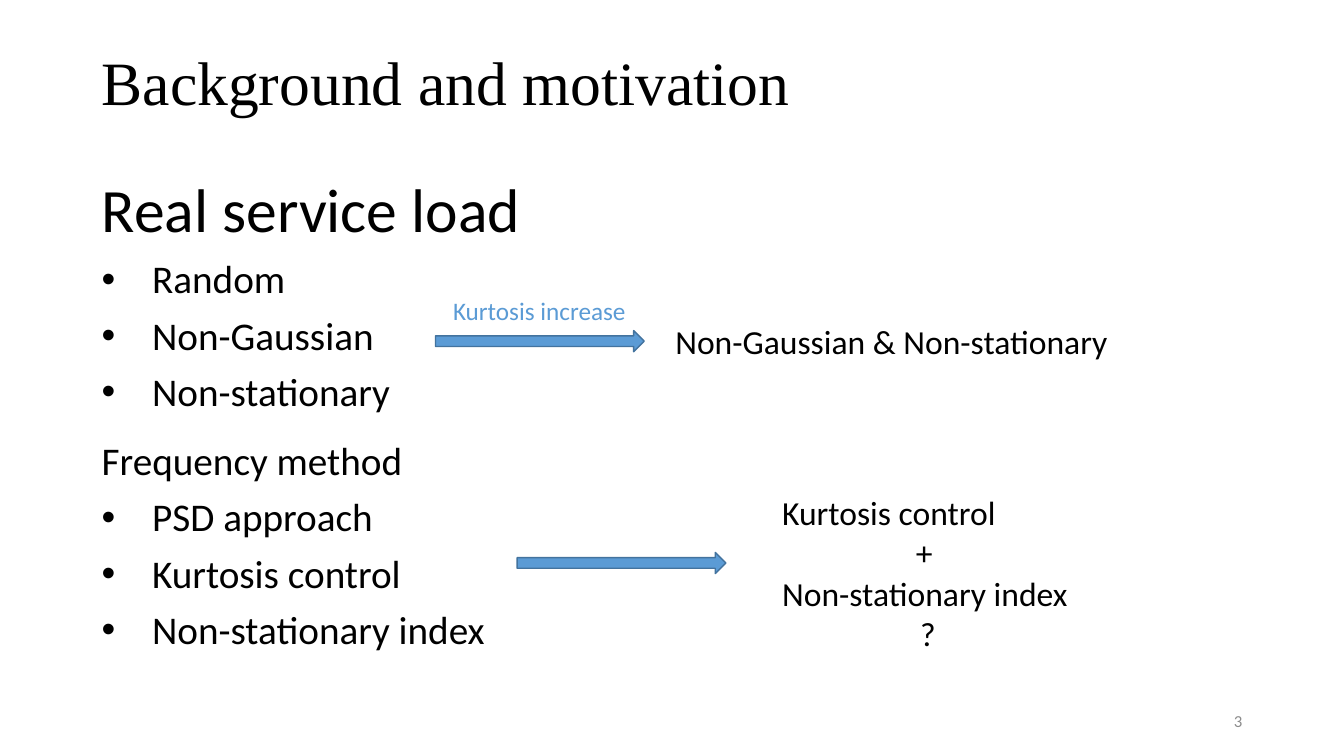
from lxml import etree
from pptx import Presentation
from pptx import util as u
from pptx.dml.color import RGBColor
from pptx.enum import shapes, text
from pptx.oxml import ns

WIDTH, HEIGHT = u.Inches(13.33), u.Inches(7.5)
LEFT, CENTER, RIGHT = text.PP_ALIGN.LEFT, text.PP_ALIGN.CENTER, text.PP_ALIGN.RIGHT
TOP, MIDDLE = text.MSO_ANCHOR.TOP, text.MSO_ANCHOR.MIDDLE
BLACK, BLUE, DARK_BLUE, GRAY = "000000", "5B9BD5", "43739E", "8C8C8C"
MARGIN = 6.83


def color(value):
    return RGBColor.from_string(value)


def place(left, top, width, height):
    shares = ((left, WIDTH), (top, HEIGHT), (width, WIDTH), (height, HEIGHT))
    return [round(share * side / 100) for share, side in shares]


deck = Presentation()
deck.slide_width, deck.slide_height = WIDTH, HEIGHT
page = deck.slides.add_slide(deck.slide_layouts[6])

labels = [
    ((MARGIN, 5.07, 78.77, 12.53), MIDDLE, True, 44, "Times New Roman", BLACK, 0.9,
     [("Background and motivation", LEFT)]),
    ((70.67, 92.67, 22.5, 5.33), MIDDLE, True, 12, "Calibri", GRAY, 1,
     [("3", RIGHT)]),
    ((32.71, 38.27, 14.85, 5.47), MIDDLE, True, 18, "Calibri", BLUE, 1,
     [("Kurtosis increase", CENTER)]),
    ((49.51, 41.73, 33.98, 6.67), TOP, False, 24, "Calibri", BLACK, 1,
     [("Non-Gaussian & Non-stationary", LEFT)]),
    ((57.46, 64.4, 23.18, 22.93), TOP, True, 24, "Calibri", BLACK, 1,
     [("Kurtosis control", LEFT), ("+ ", CENTER),
      ("Non-stationary index", LEFT), ("?", CENTER)]),
]
for area, anchor, wrap, size, font, ink, spacing, lines in labels:
    box = page.shapes.add_textbox(*place(*area))
    frame = box.text_frame
    frame.word_wrap = wrap
    frame.vertical_anchor = anchor
    for index, (words, align) in enumerate(lines):
        para = frame.add_paragraph() if index else frame.paragraphs[0]
        para.alignment = align
        para.line_spacing = spacing
        span = para.add_run()
        span.text = words
        span.font.size = u.Pt(size)
        span.font.name = font
        span.font.color.rgb = color(ink)

topics = [
    ((MARGIN, 23.07, 33.76, 32.8), 44,
     ["Real service load", "Random", "Non-Gaussian", "Non-stationary"]),
    ((MARGIN, 57.73, 42.84, 29.6), 28,
     ["Frequency method", "PSD approach", "Kurtosis control", "Non-stationary index"]),
]
for area, heading_size, lines in topics:
    box = page.shapes.add_textbox(*place(*area))
    frame = box.text_frame
    frame.word_wrap = True
    for index, words in enumerate(lines):
        para = frame.add_paragraph() if index else frame.paragraphs[0]
        para.line_spacing = 0.9
        para.space_before = u.Pt(10)
        span = para.add_run()
        span.text = words
        span.font.size = u.Pt(28 if index else heading_size)
        span.font.name = "Calibri"
        span.font.color.rgb = color(BLACK)
        if index:
            settings = para._p.get_or_add_pPr()
            settings.set("marL", str(u.Inches(0.5)))
            settings.set("indent", str(-u.Inches(0.5)))
            etree.SubElement(settings, ns.qn("a:buFont")).set("typeface", "Arial")
            etree.SubElement(settings, ns.qn("a:buChar")).set("char", "•")

for left, top in ((32.41, 43.73), (38.48, 73.07)):
    arrow = page.shapes.add_shape(
        shapes.MSO_SHAPE.RIGHT_ARROW, *place(left, top, 15.53, 2.8))
    arrow.shadow.inherit = False
    arrow.fill.solid()
    arrow.fill.fore_color.rgb = color(BLUE)
    arrow.line.color.rgb = color(DARK_BLUE)
    arrow.line.width = u.Pt(1)

deck.save("out.pptx")
